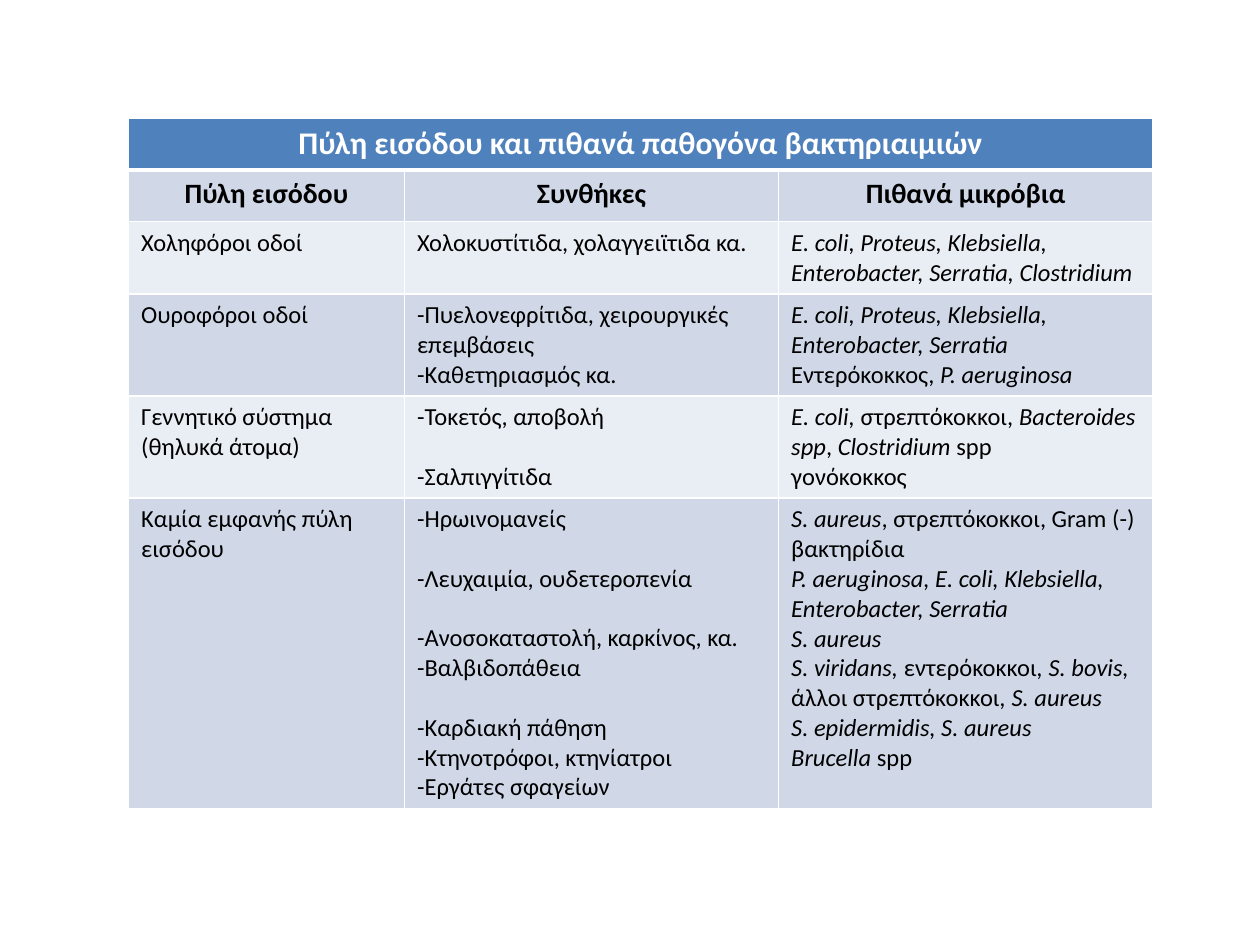
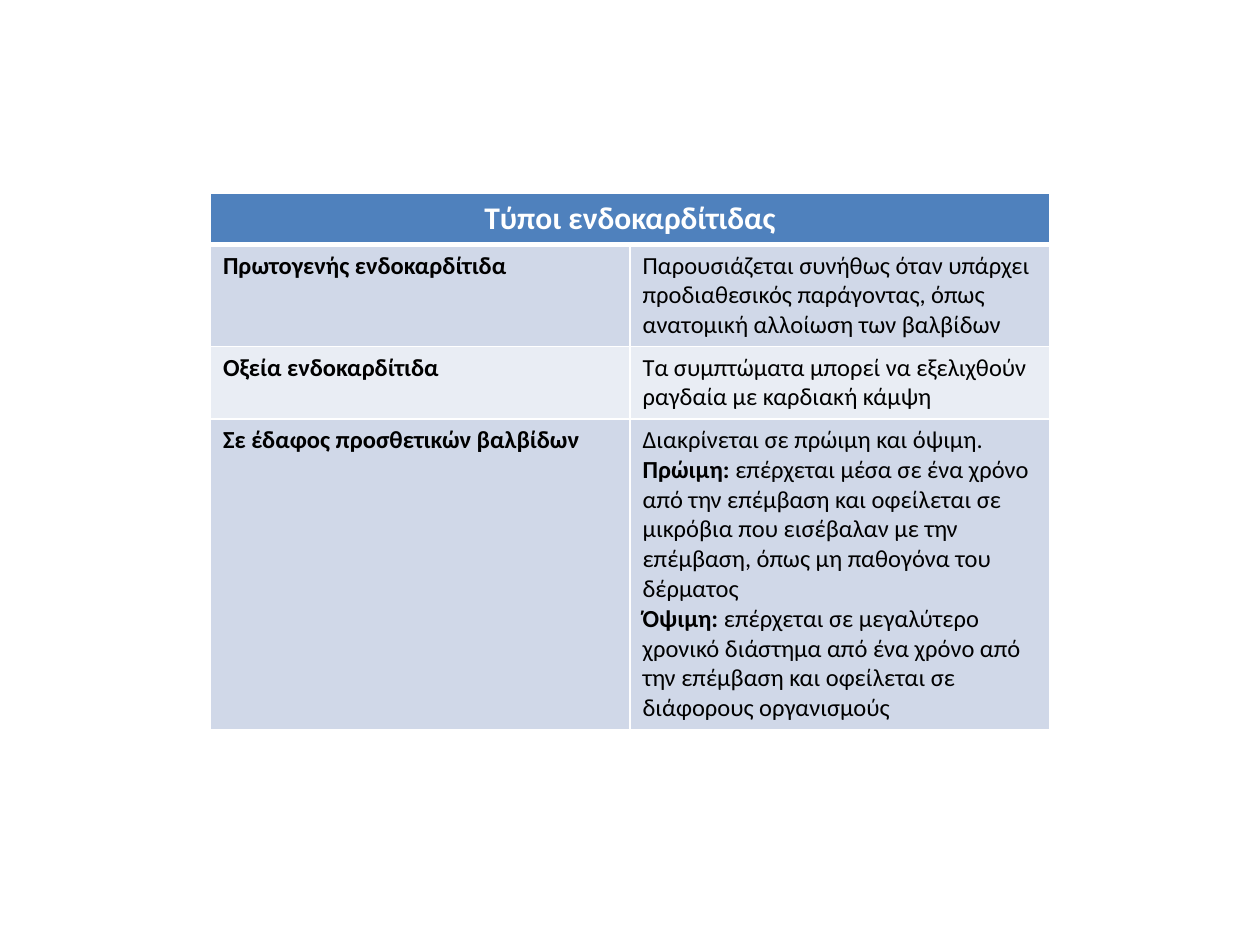
from lxml import etree
from pptx import Presentation
from pptx.dml.color import RGBColor
from pptx.enum import text
from pptx.oxml import ns
from pptx.util import Inches, Pt

FONT = "Calibri"
WHITE, BLACK = "FFFFFF", "000000"
HEADER_BLUE = "4F81BD"
BANDS = ["E9EDF4", "D0D8E8"]
BODY_SIZE, COLUMN_TITLE_SIZE, TITLE_SIZE = 14, 16, 18
LINE_GAP = Pt(17)


def color(value):
    return RGBColor.from_string(value)


def add_border(cell, side, width):
    properties = cell._tc.get_or_add_tcPr()
    line = etree.SubElement(properties, ns.qn(f"a:ln{side}"), w=str(Pt(width)))
    fill = etree.SubElement(line, ns.qn("a:solidFill"))
    etree.SubElement(fill, ns.qn("a:srgbClr"), val=WHITE)


# Pipes enclose emphasised words; a double line break leaves one line of space.
entry_points = {
    "left": 1.02, "top": 0.94,
    "columns": [2.19, 2.97, 2.97],
    "heights": [0.41, 0.41, 0.57, 0.79, 0.8, 2.43],
    "emphasis": "italic",
    "column_titles": True,
    "title": "Πύλη εισόδου και πιθανά παθογόνα βακτηριαιμιών",
    "rows": [
        ["Πύλη εισόδου", "Συνθήκες", "Πιθανά μικρόβια"],
        ["Χοληφόροι οδοί",
         "Χολοκυστίτιδα, χολαγγειϊτιδα κα.",
         "|E. coli, Proteus, Klebsiella, Enterobacter, Serratia, Clostridium|"],
        ["Ουροφόροι οδοί",
         "-Πυελονεφρίτιδα, χειρουργικές επεμβάσεις\n-Καθετηριασμός κα.",
         "|E. coli, Proteus, Klebsiella, Enterobacter, Serratia|\n"
         "Εντερόκοκκος, |P. aeruginosa|"],
        ["Γεννητικό σύστημα (θηλυκά άτομα)",
         "-Τοκετός, αποβολή\n\n-Σαλπιγγίτιδα",
         "|E. coli, |στρεπτόκοκκοι, |Bacteroides spp|, |Clostridium |spp\n"
         "γονόκοκκος"],
        ["Καμία εμφανής πύλη εισόδου",
         "-Ηρωινομανείς\n\n-Λευχαιμία, ουδετεροπενία\n\n"
         "-Ανοσοκαταστολή, καρκίνος, κα.\n-Βαλβιδοπάθεια\n\n"
         "-Καρδιακή πάθηση\n-Κτηνοτρόφοι, κτηνίατροι\n-Εργάτες σφαγείων",
         "|S. aureus|, στρεπτόκοκκοι, Gram (-) βακτηρίδια\n"
         "|P. aeruginosa, E. coli, Klebsiella, Enterobacter, Serratia|\n"
         "|S. aureus|\n"
         "|S. viridans, |εντερόκοκκοι|, S. bovis, |άλλοι στρεπτόκοκκοι|, S. aureus|\n"
         "|S. epidermidis, S. aureus|\n"
         "|Brucella |spp"],
    ],
}

endocarditis_types = {
    "left": 1.67, "top": 1.53,
    "columns": [3.33, 3.33],
    "heights": [0.41, 0.79, 0.57, 2.43],
    "emphasis": "bold",
    "column_titles": False,
    "title": "Τύποι ενδοκαρδίτιδας",
    "rows": [
        ["|Πρωτογενής ενδοκαρδίτιδα|",
         "Παρουσιάζεται συνήθως όταν υπάρχει προδιαθεσικός παράγοντας, "
         "όπως ανατομική αλλοίωση των βαλβίδων"],
        ["|Οξεία ενδοκαρδίτιδα|",
         "Τα συμπτώματα μπορεί να εξελιχθούν ραγδαία με καρδιακή κάμψη"],
        ["|Σε έδαφος προσθετικών βαλβίδων|",
         "Διακρίνεται σε πρώιμη και όψιμη.\n"
         "|Πρώιμη: |επέρχεται μέσα σε ένα χρόνο από την επέμβαση και "
         "οφείλεται σε μικρόβια που εισέβαλαν με την επέμβαση, όπως μη "
         "παθογόνα του δέρματος\n"
         "|Όψιμη:| επέρχεται σε μεγαλύτερο χρονικό διάστημα από ένα χρόνο "
         "από την επέμβαση και οφείλεται σε διάφορους οργανισμούς"],
    ],
}

deck = Presentation()
deck.slide_width, deck.slide_height = Inches(10), Inches(7.5)

for topic in (entry_points, endocarditis_types):
    slide = deck.slides.add_slide(deck.slide_layouts[6])
    columns, heights = topic["columns"], topic["heights"]
    grid = slide.shapes.add_table(
        len(heights), len(columns), Inches(topic["left"]), Inches(topic["top"]),
        Inches(sum(columns)), Inches(sum(heights))).table
    for column, width in zip(grid.columns, columns):
        column.width = Inches(width)
    for row, height in zip(grid.rows, heights):
        row.height = Inches(height)
    grid.cell(0, 0).merge(grid.cell(0, len(columns) - 1))

    title_row = [topic["title"]] + [""] * (len(columns) - 1)
    for row_number, contents in enumerate([title_row] + topic["rows"]):
        is_title = row_number == 0
        is_column_title = row_number == 1 and topic["column_titles"]
        is_heading = is_title or is_column_title
        size = TITLE_SIZE if is_title else COLUMN_TITLE_SIZE if is_column_title else BODY_SIZE
        for column_number, content in enumerate(contents):
            cell = grid.cell(row_number, column_number)
            add_border(cell, "L", 1)
            add_border(cell, "R", 1)
            add_border(cell, "T", 3 if row_number == 1 else 1)
            add_border(cell, "B", 3 if is_title else 1)
            cell.fill.solid()
            cell.fill.fore_color.rgb = color(HEADER_BLUE if is_title else BANDS[row_number % 2])
            if not content:
                continue

            paragraph, gap_before = None, False
            for line in content.split("\n"):
                if not line:
                    gap_before = True
                    continue
                frame = cell.text_frame
                paragraph = frame.add_paragraph() if paragraph else frame.paragraphs[0]
                if gap_before:
                    paragraph.space_before = LINE_GAP
                    gap_before = False
                if is_heading:
                    paragraph.alignment = text.PP_ALIGN.CENTER
                for piece_number, piece in enumerate(line.split("|")):
                    if not piece:
                        continue
                    run = paragraph.add_run()
                    run.text = piece
                    run.font.name, run.font.size = FONT, Pt(size)
                    run.font.color.rgb = color(WHITE if is_title else BLACK)
                    run.font.bold = is_heading
                    if piece_number % 2:
                        setattr(run.font, topic["emphasis"], True)

deck.save("out.pptx")
